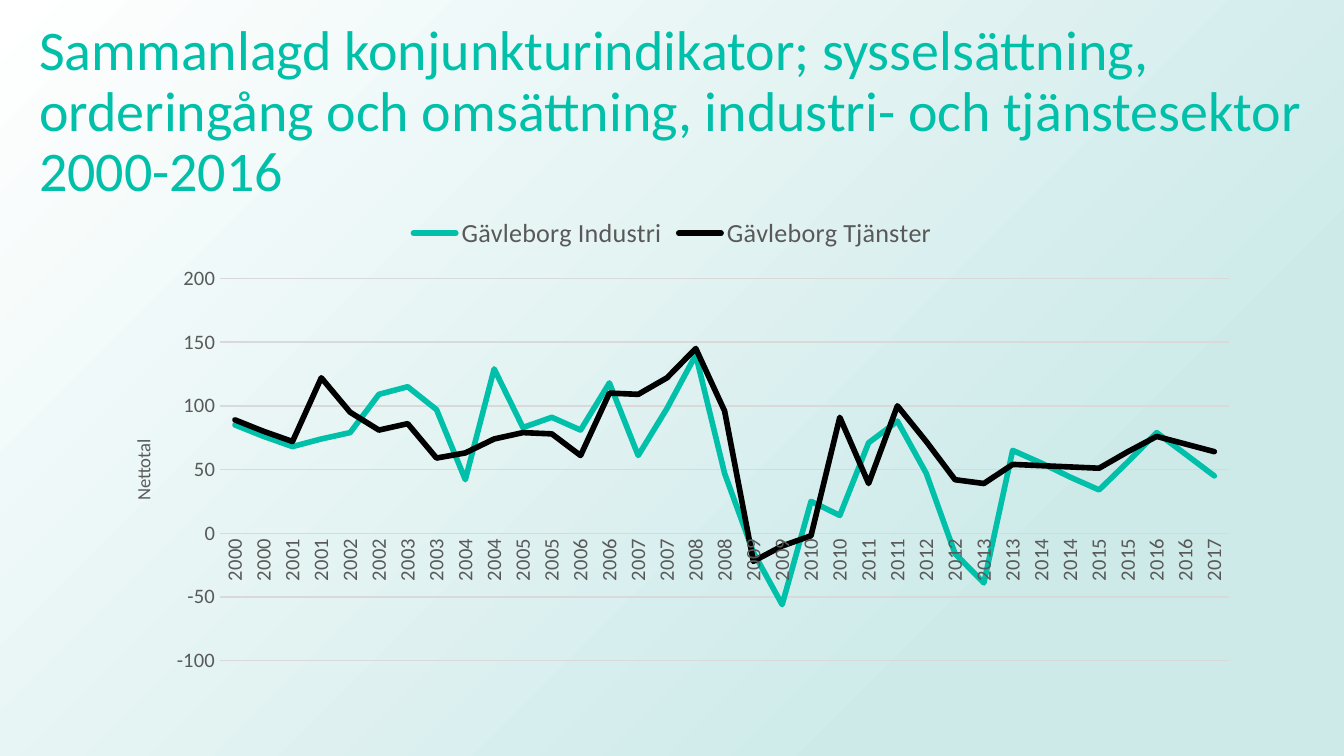
from lxml import etree
from pptx import Presentation
from pptx.chart.data import CategoryChartData
from pptx.dml.color import RGBColor
from pptx.enum.chart import XL_CHART_TYPE, XL_LEGEND_POSITION, XL_TICK_MARK
from pptx.enum.shapes import MSO_SHAPE
from pptx.enum.text import MSO_ANCHOR
from pptx.oxml import parse_xml
from pptx.oxml.ns import qn
from pptx.util import Pt

LINE = XL_CHART_TYPE.LINE
TOP = XL_LEGEND_POSITION.TOP
NO_TICK = XL_TICK_MARK.NONE
RECTANGLE = MSO_SHAPE.RECTANGLE
MIDDLE = MSO_ANCHOR.MIDDLE
EMU_PER_PX = 914400 / 134.4
UPWARD = "-5400000"
DRAWING = "http://schemas.openxmlformats.org/drawingml/2006/main"

TEAL = "00C0A9"
BLACK = "000000"
GREY = "595959"
GRID = "D9D9D9"

TITLE = ("Sammanlagd konjunkturindikator; sysselsättning, orderingång och "
         "omsättning, industri- och tjänstesektor 2000-2016")
YEARS = [str(2000 + half // 2) for half in range(35)]
SERIES = [
    ("Gävleborg Industri", TEAL,
     [85, 76, 68, 74, 79, 109, 115, 97, 42, 129, 83, 91, 81, 118, 61, 98, 140, 47,
      -15, -56, 25, 14, 71, 88, 47, -16, -39, 65, 55, 44, 34, 56, 79, 62, 45]),
    ("Gävleborg Tjänster", BLACK,
     [89, 80, 72, 122, 95, 81, 86, 59, 63, 74, 79, 78, 61, 110, 109, 122, 145, 96,
      -22, -10, -2, 91, 39, 100, 72, 42, 39, 54, 53, 52, 51, 64, 76, 70, 64]),
]


def px(length):
    return round(length * EMU_PER_PX)


def color(value):
    return RGBColor.from_string(value)


def set_layout(element, index, **fractions):
    for old in element.findall(qn("c:layout")):
        element.remove(old)
    layout = etree.Element(qn("c:layout"))
    manual = etree.SubElement(layout, qn("c:manualLayout"))
    if "w" in fractions:
        etree.SubElement(manual, qn("c:layoutTarget"), val="inner")
    for side in "xy":
        etree.SubElement(manual, qn(f"c:{side}Mode"), val="edge")
    for name, fraction in fractions.items():
        etree.SubElement(manual, qn(f"c:{name}"), val=str(fraction))
    element.insert(index, layout)


class SlideBuilder:
    font_name = "Calibri"

    def __init__(self, slide):
        self.slide = slide

    def style_font(self, font, size, hex_color):
        font.name = self.font_name
        font.size = Pt(size)
        font.bold = False
        font.color.rgb = color(hex_color)

    def background(self, width, height, stops):
        shape = self.slide.shapes.add_shape(RECTANGLE, 0, 0, px(width), px(height))
        shape.shadow.inherit = False
        shape.line.fill.background()
        shape.fill.solid()
        solid = shape.fill._xPr.find(qn("a:solidFill"))
        stop_xml = "".join(
            f'<a:gs pos="{percent * 1000}"><a:srgbClr val="{value}"/></a:gs>'
            for percent, value in stops)
        gradient = parse_xml(
            f'<a:gradFill xmlns:a="{DRAWING}" rotWithShape="1"><a:gsLst>{stop_xml}</a:gsLst>'
            '<a:path path="circle"><a:fillToRect l="100000" t="100000"/></a:path>'
            '</a:gradFill>')
        solid.getparent().replace(solid, gradient)

    def title(self, box, text, size, hex_color):
        shape = self.slide.shapes.add_textbox(*map(px, box))
        text_frame = shape.text_frame
        text_frame.word_wrap = True
        text_frame.vertical_anchor = MIDDLE
        text_frame.text = text
        paragraph = text_frame.paragraphs[0]
        paragraph.line_spacing = 0.9
        self.style_font(paragraph.runs[0].font, size, hex_color)

    def line_chart(self, box, categories, series_list, axis_title):
        data = CategoryChartData()
        data.categories = categories
        for name, _, values in series_list:
            data.add_series(name, values)
        chart = self.slide.shapes.add_chart(LINE, *map(px, box), data).chart
        self.style_font(chart.font, 10, BLACK)
        chart.has_title = False
        chart.has_legend = True
        chart.legend.position = TOP
        chart.legend.include_in_layout = False
        self.style_font(chart.legend.font, 14, GREY)
        chart.plots[0].vary_by_categories = False
        for series, (_, hex_color, _) in zip(chart.plots[0].series, series_list):
            series.smooth = False
            line = series.format.line
            line.color.rgb = color(hex_color)
            line.width = Pt(3)
            line._ln.set("cap", "rnd")
            etree.SubElement(line._ln, qn("a:round"))
        self.style_axes(chart, axis_title)
        plot_area = chart._chartSpace.chart.plotArea
        set_layout(plot_area, 0, x=0.11, y=0.16, w=0.87, h=0.8)

    def style_axes(self, chart, axis_title):
        category_axis, value_axis = chart.category_axis, chart.value_axis
        for axis in (category_axis, value_axis):
            axis.major_tick_mark = axis.minor_tick_mark = NO_TICK
            self.style_font(axis.tick_labels.font, 11, GREY)
        category_axis._element.txPr.bodyPr.set("rot", UPWARD)
        value_axis.minimum_scale, value_axis.maximum_scale = -100, 200
        value_axis.major_unit = 50
        value_axis.tick_labels.number_format = "0"
        value_axis.tick_labels.number_format_is_linked = False
        value_axis.format.line.fill.background()
        value_axis.has_major_gridlines = True
        for line in (category_axis.format.line, value_axis.major_gridlines.format.line):
            line.color.rgb = color(GRID)
            line.width = Pt(0.75)
        text_frame = value_axis.axis_title.text_frame
        text_frame.text = axis_title
        text_frame._txBody.bodyPr.set("rot", UPWARD)
        self.style_font(text_frame.paragraphs[0].runs[0].font, 10, GREY)
        set_layout(value_axis.axis_title._element, 1, x=0.03, y=0.49)


def main():
    presentation = Presentation()
    presentation.slide_width, presentation.slide_height = px(1344), px(756)
    builder = SlideBuilder(presentation.slides.add_slide(presentation.slide_layouts[6]))
    builder.background(1344, 756, [(23, "CDEAE9"), (100, "FFFFFF")])
    builder.title((26, 40, 1347, 146), TITLE, 30, TEAL)
    builder.line_chart((93, 202, 1159, 478), YEARS, SERIES, "Nettotal")
    presentation.save("out.pptx")


if __name__ == "__main__":
    main()
